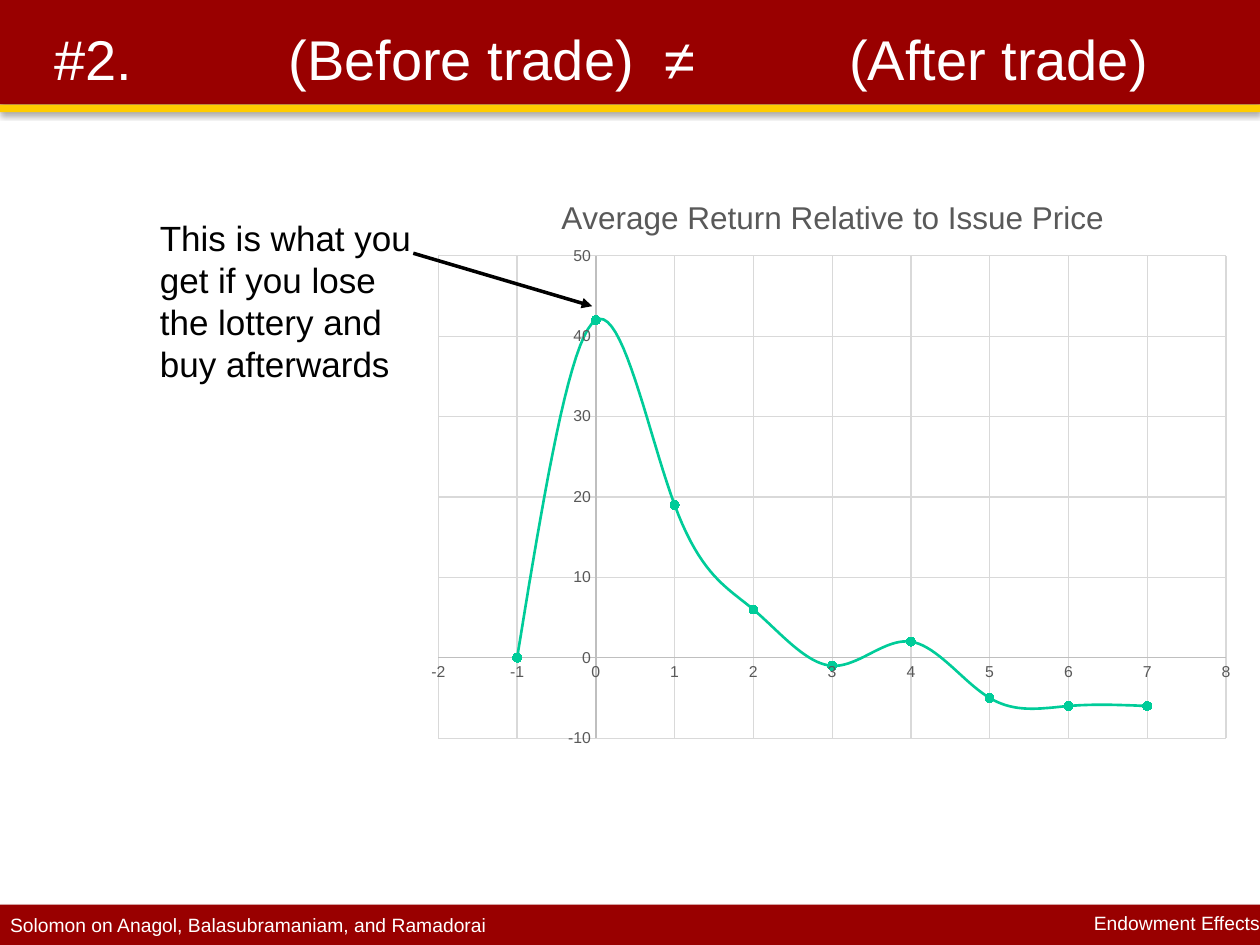
import dataclasses

import lxml.etree
import pptx
import pptx.chart.data
import pptx.dml.color
import pptx.enum.chart
import pptx.enum.shapes
import pptx.enum.text
import pptx.oxml.ns
import pptx.util

Inches = pptx.util.Inches
Pt = pptx.util.Pt
ALIGN = pptx.enum.text.PP_ALIGN
qn = pptx.oxml.ns.qn


@dataclasses.dataclass(frozen=True)
class Theme:
    font: str = "Arial"
    red: str = "990000"
    gold: str = "FFCC00"
    green: str = "00CC99"
    black: str = "000000"
    white: str = "FFFFFF"
    label: str = "595959"
    axis: str = "BFBFBF"
    grid: str = "D9D9D9"
    title_size: int = 32
    note_size: int = 20
    chart_title_size: int = 18
    footer_size: int = 11
    tick_size: int = 9


THEME = Theme()
WIDTH, HEIGHT = 10, 7.5
HEADER_HEIGHT, STRIPE_HEIGHT, FOOTER_HEIGHT = 0.83, 0.06, 0.32
RETURNS = list(zip(range(-1, 8), [0, 42, 19, 6, -1, 2, -5, -6, -6]))


def rgb(value):
    return pptx.dml.color.RGBColor.from_string(value)


def child(parent, tag, **attributes):
    element = lxml.etree.SubElement(parent, qn(tag))
    for name, value in attributes.items():
        element.set(name, str(value))
    return element


def format_font(font, size, color):
    font.name = THEME.font
    font.size = Pt(size)
    font.bold = False
    font.color.rgb = rgb(color)


def format_line(line, color, width):
    line.color.rgb = rgb(color)
    line.width = Pt(width)


def write_text(shape, text, size, color, align=ALIGN.LEFT, margin=None, tabs=()):
    """Fill a shape with one paragraph; tabs are inches from the text's left edge."""
    frame = shape.text_frame
    frame.word_wrap = True
    if margin is not None:
        frame.margin_left = frame.margin_right = Inches(margin)
        frame.margin_top = frame.margin_bottom = Inches(margin)
    paragraph = frame.paragraphs[0]
    paragraph.text = text
    paragraph.alignment = align
    if tabs:
        tab_list = child(paragraph._p.get_or_add_pPr(), "a:tabLst")
        for position in tabs:
            child(tab_list, "a:tab", pos=Inches(position), algn="l")
    format_font(paragraph.font, size, color)


def add_text(slide, box, text, size, color, **options):
    shape = slide.shapes.add_textbox(*map(Inches, box))
    write_text(shape, text, size, color, **options)


def add_bar(slide, top, height, color):
    """Add a full-width band with a soft shadow below it."""
    bar = slide.shapes.add_shape(
        pptx.enum.shapes.MSO_SHAPE.RECTANGLE, 0, Inches(top), Inches(WIDTH), Inches(height))
    bar.shadow.inherit = False
    bar.fill.solid()
    bar.fill.fore_color.rgb = rgb(color)
    bar.line.fill.background()
    shadow = child(bar._element.spPr.find(qn("a:effectLst")), "a:outerShdw",
                   blurRad=Pt(3.1), dist=Pt(1.8), dir=90 * 60000, rotWithShape=0)
    child(child(shadow, "a:srgbClr", val=THEME.black), "a:alpha", val=35000)


def add_arrow(slide, start, end):
    arrow = slide.shapes.add_connector(
        pptx.enum.shapes.MSO_CONNECTOR.STRAIGHT, *map(Inches, start + end))
    format_line(arrow.line, THEME.black, 2)
    child(arrow.line._get_or_add_ln(), "a:tailEnd", type="triangle")
    child(arrow._element.spPr, "a:effectLst")


def set_layout(parent, index, inner=False, **shares):
    """Place a chart part by shares of the chart's size."""
    for old in parent.findall(qn("c:layout")):
        parent.remove(old)
    layout = parent.makeelement(qn("c:layout"))
    parent.insert(index, layout)
    manual = child(layout, "c:manualLayout")
    if inner:
        child(manual, "c:layoutTarget", val="inner")
    child(manual, "c:xMode", val="edge")
    child(manual, "c:yMode", val="edge")
    for name, share in shares.items():
        child(manual, f"c:{name}", val=share)


def format_axis(axis, minimum, maximum, step):
    axis.minimum_scale, axis.maximum_scale = minimum, maximum
    axis.major_unit = step
    axis.major_tick_mark = axis.minor_tick_mark = pptx.enum.chart.XL_TICK_MARK.NONE
    axis.has_major_gridlines = True
    format_line(axis.major_gridlines.format.line, THEME.grid, 0.75)
    format_line(axis.format.line, THEME.axis, 0.75)
    format_font(axis.tick_labels.font, THEME.tick_size, THEME.label)


def format_series(series):
    format_line(series.format.line, THEME.green, 1.5)
    series.marker.style = pptx.enum.chart.XL_MARKER_STYLE.CIRCLE
    series.marker.size = 5
    series.marker.format.fill.solid()
    series.marker.format.fill.fore_color.rgb = rgb(THEME.green)
    format_line(series.marker.format.line, THEME.green, 0.75)
    smooth = series._element.find(qn("c:smooth"))
    if smooth is None:
        smooth = child(series._element, "c:smooth")
    smooth.set("val", "1")


def add_return_chart(slide, box):
    data = pptx.chart.data.XyChartData()
    data_series = data.add_series("Series 1")
    for day, value in RETURNS:
        data_series.add_data_point(day, value)
    chart = slide.shapes.add_chart(
        pptx.enum.chart.XL_CHART_TYPE.XY_SCATTER_SMOOTH, *map(Inches, box), data).chart
    format_font(chart.font, 10, THEME.black)
    chart.has_legend = False
    chart.has_title = True
    write_text(chart.chart_title, "Average Return Relative to Issue Price",
               THEME.chart_title_size, THEME.label, align=ALIGN.CENTER)
    set_layout(chart.chart_title._element, 1, x=0.17, y=0.04)
    set_layout(chart._chartSpace.chart.plotArea, 0, inner=True, x=0.03, y=0.15, w=0.94, h=0.82)
    chart.plots[0].vary_by_categories = False
    format_axis(chart.category_axis, -2, 8, 1)
    format_axis(chart.value_axis, -10, 50, 10)
    format_series(chart.plots[0].series[0])


def set_title(slide, box, text, tabs):
    title = slide.shapes.title
    title.left, title.top, title.width, title.height = map(Inches, box)
    title.text_frame.vertical_anchor = pptx.enum.text.MSO_ANCHOR.MIDDLE
    write_text(title, text, THEME.title_size, THEME.white, tabs=tabs)
    # The title sits in front of the header band.
    slide.shapes._spTree.append(title._element)


def main():
    presentation = pptx.Presentation()
    presentation.slide_width, presentation.slide_height = Inches(WIDTH), Inches(HEIGHT)
    slide = presentation.slides.add_slide(presentation.slide_layouts[5])

    add_bar(slide, HEIGHT - FOOTER_HEIGHT, FOOTER_HEIGHT, THEME.red)
    add_bar(slide, 0, HEADER_HEIGHT, THEME.red)
    add_bar(slide, HEADER_HEIGHT, STRIPE_HEIGHT, THEME.gold)
    add_text(slide, (0.08, 7.25, 4.17, 0.19), "Solomon on Anagol, Balasubramaniam, and Ramadorai",
             THEME.footer_size, THEME.white, margin=0)
    add_text(slide, (6, 7.23, 4, 0.19), "Endowment Effects",
             THEME.footer_size, THEME.white, align=ALIGN.RIGHT, margin=0)
    set_title(slide, (0.33, 0.17, 9, 0.58), "#2.\t(Before trade)\t≠\t(After trade)",
              tabs=(1.86, 4.84, 6.31))
    add_return_chart(slide, (3.28, 1.33, 6.65, 4.67))
    add_arrow(slide, (3.28, 2.01), (4.7, 2.43))
    add_text(slide, (1.17, 1.67, 2.25, 1.45),
             "This is what you get if you lose the lottery and buy afterwards",
             THEME.note_size, THEME.black)
    presentation.save("out.pptx")


if __name__ == "__main__":
    main()
